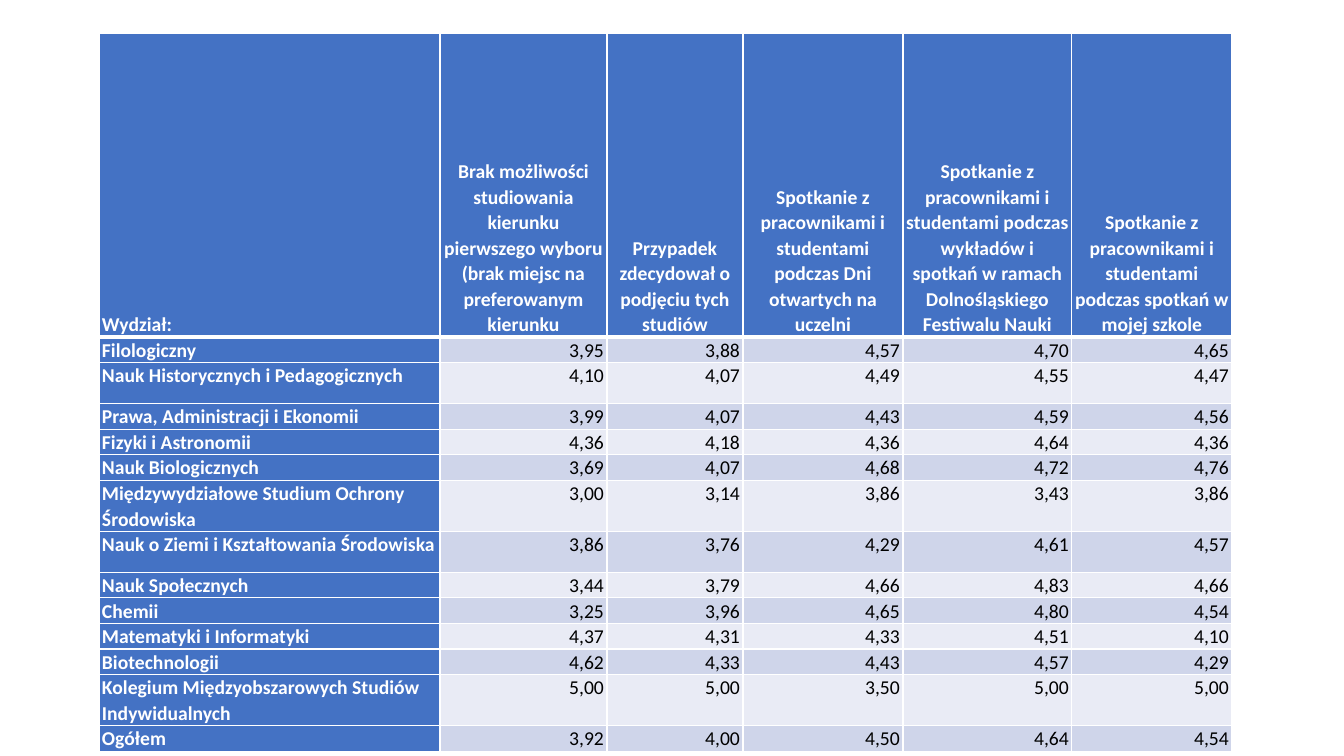
from dataclasses import dataclass

from lxml.etree import SubElement
from pptx import Presentation
from pptx.dml.color import RGBColor
from pptx.enum.text import MSO_ANCHOR as Anchor, PP_ALIGN as Align
from pptx.oxml.ns import qn
from pptx.util import Pt

CORNER = "Wydział:"
REASONS = [
    "Brak możliwości studiowania kierunku pierwszego wyboru (brak miejsc na preferowanym kierunku",
    "Przypadek zdecydował o podjęciu tych studiów",
    "Spotkanie z pracownikami i studentami podczas Dni otwartych na uczelni",
    "Spotkanie z pracownikami i studentami podczas wykładów i spotkań w ramach "
    "Dolnośląskiego Festiwalu Nauki",
    "Spotkanie z pracownikami i studentami podczas spotkań w mojej szkole",
]
# faculty, row height in px, ratings
FACULTIES = [
    ("Filologiczny", 24, ["3,95", "3,88", "4,57", "4,70", "4,65"]),
    ("Nauk Historycznych i Pedagogicznych", 41, ["4,10", "4,07", "4,49", "4,55", "4,47"]),
    ("Prawa, Administracji i Ekonomii", 24, ["3,99", "4,07", "4,43", "4,59", "4,56"]),
    ("Fizyki i Astronomii", 24, ["4,36", "4,18", "4,36", "4,64", "4,36"]),
    ("Nauk Biologicznych", 24, ["3,69", "4,07", "4,68", "4,72", "4,76"]),
    ("Międzywydziałowe Studium Ochrony Środowiska", 41, ["3,00", "3,14", "3,86", "3,43", "3,86"]),
    ("Nauk o Ziemi i Kształtowania Środowiska", 41, ["3,86", "3,76", "4,29", "4,61", "4,57"]),
    ("Nauk Społecznych", 24, ["3,44", "3,79", "4,66", "4,83", "4,66"]),
    ("Chemii", 24, ["3,25", "3,96", "4,65", "4,80", "4,54"]),
    ("Matematyki i Informatyki", 24, ["4,37", "4,31", "4,33", "4,51", "4,10"]),
    ("Biotechnologii", 24, ["4,62", "4,33", "4,43", "4,57", "4,29"]),
    ("Kolegium Międzyobszarowych Studiów Indywidualnych", 44,
     ["5,00", "5,00", "3,50", "5,00", "5,00"]),
    ("Ogółem", 24, ["3,92", "4,00", "4,50", "4,64", "4,54"]),
]

SLIDE = (1344, 756)
TABLE_LEFT, TABLE_TOP = 99, 33
HEADER_HEIGHT = 304
COLUMN_WIDTHS = [341, 167, 136, 160, 169, 160]
SIDE_INSET = 3


@dataclass(frozen=True)
class Theme:
    font: str = "Calibri"
    size: int = 14
    heading_fill: str = "4472C4"
    heading_text: str = "FFFFFF"
    rating_text: str = "000000"
    bands: tuple = ("CFD5EA", "E9EBF5")
    border: str = "FFFFFF"
    thin: int = 1
    thick: int = 3
    line_spacing: float = 1.07
    space_after: int = 8


THEME = Theme()


def px(length):
    return round(length * 914400 / 100.8)


def add_borders(cell, row):
    top = THEME.thick if row == 1 else THEME.thin
    bottom = THEME.thick if row == 0 else THEME.thin
    sides = {"a:lnL": THEME.thin, "a:lnR": THEME.thin, "a:lnT": top, "a:lnB": bottom}
    properties = cell._tc.get_or_add_tcPr()
    for side, width in sides.items():
        line = SubElement(properties, qn(side), w=str(Pt(width)))
        SubElement(SubElement(line, qn("a:solidFill")), qn("a:srgbClr"), val=THEME.border)


def write_cell(cell, text, row, column):
    heading = row == 0 or column == 0
    add_borders(cell, row)  # the schema wants borders ahead of the fill
    cell.fill.solid()
    band = THEME.bands[(row - 1) % 2]
    cell.fill.fore_color.rgb = RGBColor.from_string(THEME.heading_fill if heading else band)
    cell.margin_left = cell.margin_right = px(SIDE_INSET)
    cell.margin_top = cell.margin_bottom = 0
    cell.vertical_anchor = Anchor.BOTTOM if row == 0 else Anchor.TOP

    paragraph = cell.text_frame.paragraphs[0]
    paragraph.line_spacing = THEME.line_spacing
    paragraph.space_after = Pt(THEME.space_after)
    if column:
        paragraph.alignment = Align.RIGHT if row else Align.CENTER
    else:
        paragraph.alignment = Align.LEFT
    run = paragraph.add_run()
    run.text = text
    run.font.name = THEME.font
    run.font.size = Pt(THEME.size)
    run.font.bold = heading
    run.font.color.rgb = RGBColor.from_string(
        THEME.heading_text if heading else THEME.rating_text)


def main():
    deck = Presentation()
    deck.slide_width, deck.slide_height = map(px, SLIDE)
    slide = deck.slides.add_slide(deck.slide_layouts[6])

    lines = [[CORNER, *REASONS]] + [[name, *ratings] for name, _, ratings in FACULTIES]
    heights = [HEADER_HEIGHT] + [height for _, height, _ in FACULTIES]
    survey = slide.shapes.add_table(
        len(lines), len(COLUMN_WIDTHS), px(TABLE_LEFT), px(TABLE_TOP),
        px(sum(COLUMN_WIDTHS)), px(sum(heights))).table
    for column, width in zip(survey.columns, COLUMN_WIDTHS):
        column.width = px(width)
    for row, height in zip(survey.rows, heights):
        row.height = px(height)
    for row, line in enumerate(lines):
        for column, text in enumerate(line):
            write_cell(survey.cell(row, column), text, row, column)

    deck.save("out.pptx")


if __name__ == "__main__":
    main()
